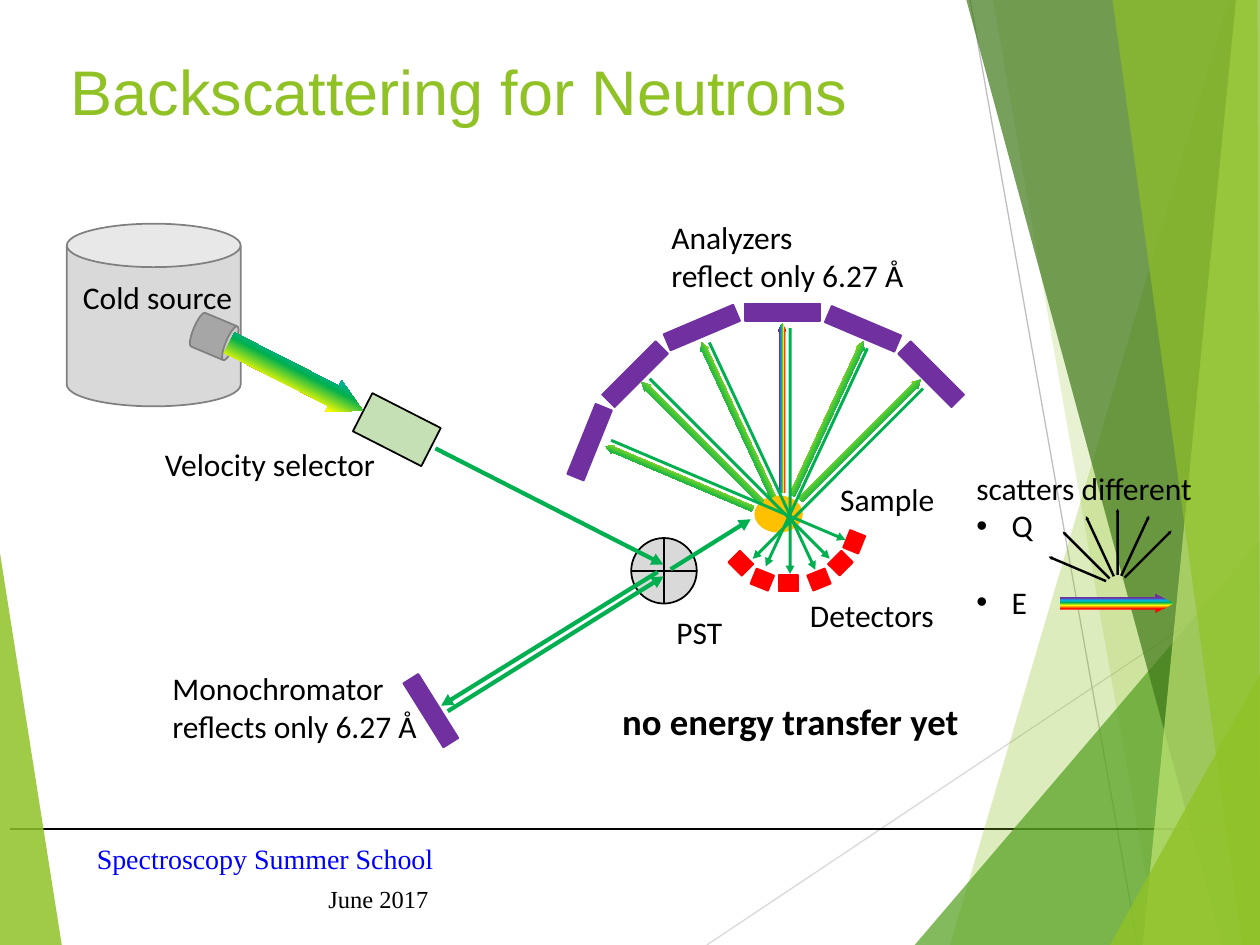
from dataclasses import dataclass

from lxml.etree import SubElement
from pptx import Presentation
from pptx.dml.color import RGBColor
from pptx.enum.shapes import MSO_CONNECTOR, MSO_SHAPE
from pptx.enum.text import MSO_ANCHOR, PP_ALIGN
from pptx.oxml.ns import qn
from pptx.util import Inches, Pt


@dataclass(frozen=True)
class Theme:
    lime: str = "90C226"
    forest: str = "54A021"
    dark_green: str = "3F7819"
    pale_lime: str = "C0E474"
    beam: str = "00B050"
    crystal: str = "7030A0"
    detector: str = "FF0000"
    sample: str = "FFC000"
    selector: str = "C5E0B4"
    vessel: str = "D9D9D9"
    guide: str = "A6A6A6"
    outline: str = "808080"
    thin_line: str = "BFBFBF"
    black: str = "000000"
    blue: str = "0000FF"
    rainbow: tuple = ((0, "FF0000"), (22, "FF0000"), (40, "FFFF00"), (54, "00B050"),
                      (67, "00B0F0"), (79, "7030A0"), (100, "7030A0"))
    title_font: str = "Arial"
    label_font: str = "Calibri"
    footer_font: str = "Times New Roman"
    title_size: int = 36
    label_size: int = 18
    note_size: int = 21
    footer_size: int = 16
    date_size: int = 14


T = Theme()
SOLID_ARROW = (0.332, 0.935)
WIDE_ARROW = (0.646, 0.935)


def add_part(kind, cx, cy, w, h, fill, line=None, rot=0, adj=(), flip=False):
    """Add a shape by its centre; a tuple as fill is a list of gradient stops."""
    sp = s.shapes.add_shape(kind, Inches(cx - w / 2), Inches(cy - h / 2), Inches(w), Inches(h))
    sp.shadow.inherit = False
    sp.rotation = rot
    for i, value in enumerate(adj):
        sp.adjustments[i] = value
    if flip:
        sp._element.spPr.find(qn("a:xfrm")).set("flipH", "1")
    if isinstance(fill, tuple):
        sp.fill.gradient()
        grad = sp._element.spPr.find(qn("a:gradFill"))
        grad.set("rotWithShape", "1")
        stops = grad.find(qn("a:gsLst"))
        for old in list(stops):
            stops.remove(old)
        for pos, color in fill:
            stop = SubElement(stops, qn("a:gs"), pos=str(pos * 1000))
            SubElement(stop, qn("a:srgbClr"), val=color)
        grad.find(qn("a:lin")).set("ang", str(270 * 60000))
    else:
        sp.fill.solid()
        sp.fill.fore_color.rgb = RGBColor.from_string(fill)
    if line:
        sp.line.color.rgb = RGBColor.from_string(line)
        sp.line.width = Pt(1)
    else:
        sp.line.fill.background()


def add_label(text, x, y, w, h, size=T.label_size, font=T.label_font, color=T.black, bold=False):
    tf = s.shapes.add_textbox(Inches(x), Inches(y), Inches(w), Inches(h)).text_frame
    tf.word_wrap = False
    tf.text = text
    for p in tf.paragraphs:
        for r in p.runs:
            r.font.name, r.font.size, r.font.bold = font, Pt(size), bold
            r.font.color.rgb = RGBColor.from_string(color)
    return tf


prs = Presentation()
prs.slide_width, prs.slide_height = Inches(10), Inches(7.5)
s = prs.slides.add_slide(prs.slide_layouts[5])

# Background lines: start, end, colour
for x1, y1, x2, y2, color in (
    (5.61, 7.5, 10, 4.57, T.vessel),
    (7.7, 0, 9.03, 7.5, T.thin_line),
    (0.08, 6.58, 10, 6.58, T.black),
):
    rule = s.shapes.add_connector(MSO_CONNECTOR.STRAIGHT, Inches(x1), Inches(y1), Inches(x2), Inches(y2))
    rule.line.color.rgb = RGBColor.from_string(color)
    rule.line.width = Pt(0.75)
    SubElement(rule._element.spPr, qn("a:effectLst"))
# The last line is the footer arrow
SubElement(rule.line._get_or_add_ln(), qn("a:tailEnd"), type="stealth", w="lg", len="lg")

# Translucent facets: corners, colour, opacity in percent
for corners, color, alpha in (
    (((0, 4.39), (0.49, 7.5), (0, 7.5)), T.lime, 85),
    (((9.75, 0), (7.54, 7.5), (10, 7.5), (10, 0)), T.lime, 30),
    (((7.88, 0), (9.19, 7.5), (10, 7.5), (10, 0)), T.lime, 20),
    (((7.26, 7.5), (10, 4.29), (10, 7.5)), T.forest, 72),
    (((7.67, 0), (9.7, 7.5), (10, 7.5), (10, 0)), T.dark_green, 70),
    (((9.81, 0), (9.07, 7.5), (10, 7.5), (10, 0)), T.pale_lime, 70),
    (((8.83, 0), (9.86, 7.5), (10, 7.5), (9.98, 0)), T.lime, 65),
    (((8.81, 7.5), (10, 5.35), (10, 7.5)), T.lime, 80),
):
    points = [(Inches(x), Inches(y)) for x, y in corners]
    builder = s.shapes.build_freeform(*points[0])
    builder.add_line_segments(points[1:])
    facet = builder.convert_to_shape()
    facet.shadow.inherit = False
    facet.fill.solid()
    facet.fill.fore_color.rgb = RGBColor.from_string(color)
    facet.line.fill.background()
    clr = facet._element.spPr.find(qn("a:solidFill")).find(qn("a:srgbClr"))
    SubElement(clr, qn("a:alpha"), val=str(alpha * 1000))

title = s.shapes.title
title.left, title.top, title.width, title.height = Inches(0.46), Inches(0.36), Inches(7.5), Inches(0.71)
tf = title.text_frame
tf.text = "Backscattering for Neutrons"
tf.vertical_anchor = MSO_ANCHOR.MIDDLE
p = tf.paragraphs[0]
p.alignment = PP_ALIGN.LEFT
r = p.runs[0]
r.font.name, r.font.size = T.title_font, Pt(T.title_size)
r.font.color.rgb = RGBColor.from_string(T.lime)

# Source, chopper, sample and velocity selector
add_part(MSO_SHAPE.CAN, 1.22, 2.5, 1.38, 1.45, T.vessel, T.outline)
add_part(MSO_SHAPE.FLOWCHART_SUMMING_JUNCTION, 5.27, 4.53, 0.52, 0.52, T.vessel, T.black, 315)
add_part(MSO_SHAPE.OVAL, 6.18, 4.08, 0.37, 0.28, T.sample, T.sample)
add_part(MSO_SHAPE.RECTANGLE, 3.15, 3.41, 0.61, 0.34, T.selector, T.black, 27)

# Detectors, analyzers and the monochromator: centre and rotation
for cx, cy, rot in ((5.88, 4.47, 315), (6.05, 4.6, 292), (6.26, 4.63, 90),
                    (6.5, 4.6, 68), (6.67, 4.47, 45), (6.78, 4.3, 22)):
    add_part(MSO_SHAPE.RECTANGLE, cx, cy, 0.13, 0.15, T.detector, T.detector, rot)
for cx, cy, rot in ((4.68, 3.51, 22), (5.04, 2.97, 45), (5.57, 2.6, 67), (6.21, 2.48, 90),
                    (6.85, 2.61, 293), (7.39, 2.97, 315), (3.42, 5.64, 328)):
    add_part(MSO_SHAPE.RECTANGLE, cx, cy, 0.14, 0.6, T.crystal, T.crystal, rot)

# Beams between selector, chopper, monochromator and sample
for cx, cy, length, rot in ((4.36, 4.02, 2.03, 27), (4.36, 5.07, 2.02, 148.3),
                            (4.41, 5.11, 2.02, 328), (5.64, 4.32, 0.75, 328)):
    add_part(MSO_SHAPE.RIGHT_ARROW, cx, cy, length, 0.1, T.beam, rot=rot, adj=SOLID_ARROW)

# Scattered rays, full size at the sample and small beside "Q";
# each ray: offset from the upright one, length, rotation, flip
RAYS = ((0, 0, 1.35, 270, False), (-0.36, 0.09, 1.35, 245.1, False), (-0.64, 0.27, 1.35, 225, False),
        (-0.82, 0.55, 1.27, 203, False), (0.36, 0.08, 1.35, 114.9, True), (0.62, 0.25, 1.35, 135, True))
for x, y, scale, thickness, fill in ((6.21, 3.24, 1, 0.07, T.rainbow), (8.87, 4.3, 0.39, 0.03, T.black)):
    for dx, dy, length, rot, flip in RAYS:
        add_part(MSO_SHAPE.RIGHT_ARROW, x + dx * scale, y + dy * scale, length * scale, thickness,
                 fill, rot=rot, adj=WIDE_ARROW, flip=flip)

# Rays reflected by the analyzers onto the detectors
for cx, cy, length, rot in ((6.27, 3.58, 1.95, 90), (5.87, 3.72, 2.02, 45), (6.48, 3.63, 1.91, 115),
                            (6.05, 3.62, 1.99, 65), (5.78, 3.89, 2.02, 23), (6.65, 3.76, 1.91, 135)):
    add_part(MSO_SHAPE.RIGHT_ARROW, cx, cy, length, 0.07, T.beam, rot=rot, adj=SOLID_ARROW)

# Neutron guide, white beam and energy arrow
add_part(MSO_SHAPE.CAN, 1.7, 2.67, 0.29, 0.35, T.guide, T.outline, 112.8)
add_part(MSO_SHAPE.RIGHT_ARROW, 2.35, 2.99, 1.19, 0.28, T.rainbow, rot=27, adj=WIDE_ARROW)
add_part(MSO_SHAPE.RIGHT_ARROW, 8.86, 4.79, 0.9, 0.15, T.rainbow, adj=WIDE_ARROW)

for text, x, y, w, h in (
    ("Cold source", 0.56, 2.16, 1.4, 0.4),
    ("Detectors", 6.33, 4.68, 1.19, 0.4),
    ("Sample", 6.57, 3.76, 0.96, 0.4),
    ("PST", 5.27, 4.82, 0.57, 0.4),
    ("Monochromator\nreflects only 6.27 Å", 1.27, 5.26, 2.16, 0.71),
    ("Analyzers\nreflect only 6.27 Å", 5.23, 1.68, 2.07, 0.71),
    ("Velocity selector", 1.21, 3.48, 1.89, 0.4),
):
    add_label(text, x, y, w, h)
add_label("no energy transfer yet", 4.84, 5.5, 2.9, 0.45, T.note_size, bold=True)

tf = add_label("scatters different\nQ\nE", 7.65, 3.67, 1.95, 1.31)
tf.word_wrap = True
for p in tf.paragraphs[1:]:
    pPr = p._p.get_or_add_pPr()
    pPr.set("marL", str(Inches(0.28)))
    pPr.set("indent", str(-Inches(0.28)))
    SubElement(pPr, qn("a:buFont"), typeface=T.title_font)
    SubElement(pPr, qn("a:buChar"), char="•")
tf.paragraphs[2].space_before = Pt(22)

tf = add_label("June 2017", 2, 6.92, 1.5, 0.42, T.date_size, T.footer_font)
tf.word_wrap = True
tf.vertical_anchor = MSO_ANCHOR.MIDDLE
tf.paragraphs[0].alignment = PP_ALIGN.RIGHT
tf = add_label("Spectroscopy Summer School", 0.67, 6.61, 5.06, 0.4, T.footer_size, T.footer_font, T.blue)
tf.word_wrap = True
tf.vertical_anchor = MSO_ANCHOR.MIDDLE

prs.save("out.pptx")
